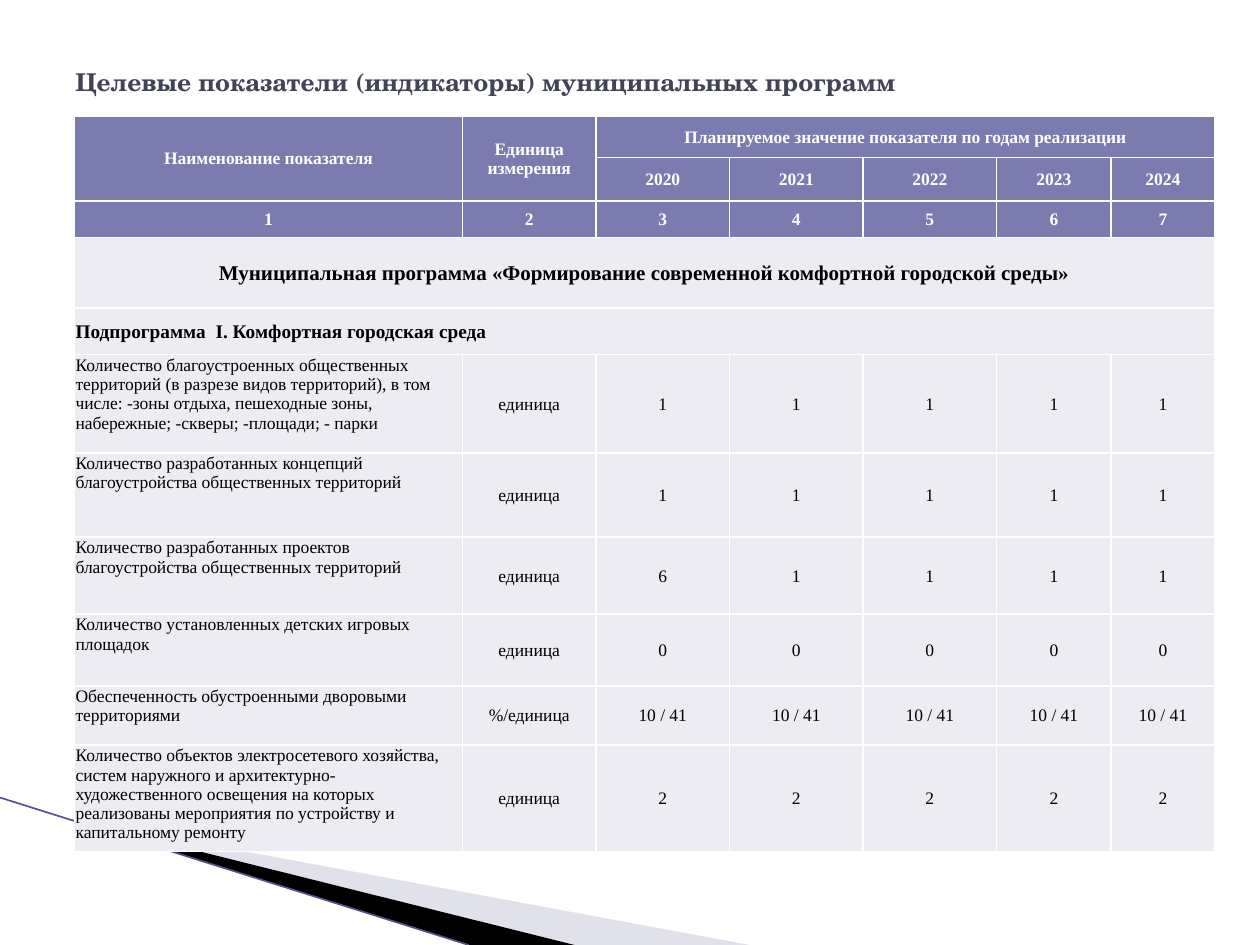
import pptx
import pptx.dml.color
import pptx.enum.shapes
import pptx.enum.text
import pptx.oxml
import pptx.oxml.ns
import pptx.util

RGB = pptx.dml.color.RGBColor
WHITE = RGB(0xFF, 0xFF, 0xFF)
BLACK = RGB(0x00, 0x00, 0x00)
INK = RGB(0x42, 0x44, 0x56)
HEAD = RGB(0x7A, 0x7B, 0xAE)
BODY = RGB(0xEC, 0xEC, 0xF2)
LILAC = RGB(0xB6, 0xB6, 0xD1)
EDGE = RGB(0x53, 0x54, 0x8A)

SERIF = "Times New Roman"
SCHOLA = "TeX Gyre Schola"
CENTER = pptx.enum.text.PP_ALIGN.CENTER
LEFT = pptx.enum.text.PP_ALIGN.LEFT
MIDDLE = pptx.enum.text.MSO_ANCHOR.MIDDLE
TOP = pptx.enum.text.MSO_ANCHOR.TOP

# The slide is a grid of 100 columns and 75 rows of square units.
UNIT = pptx.util.Inches(0.1)
COLS = [30.8, 10.6, 10.6, 10.6, 10.6, 9.1, 8.2]
ROWS = [3.3, 3.2, 2.9, 5.6, 3.7, 7.8, 6.7, 6.1, 5.7, 4.7, 7.7]

YEARS = ["2020", "2021", "2022", "2023", "2024"]
PLAN = [
    ("Количество благоустроенных общественных территорий (в разрезе видов "
     "территорий), в том числе: -зоны отдыха, пешеходные зоны, набережные; "
     "-скверы; -площади; - парки", "единица", ["1"] * 5),
    ("Количество разработанных концепций благоустройства общественных "
     "территорий", "единица", ["1"] * 5),
    ("Количество разработанных проектов благоустройства общественных "
     "территорий", "единица", ["6"] + ["1"] * 4),
    ("Количество установленных детских игровых площадок", "единица",
     ["0"] * 5),
    ("Обеспеченность обустроенными дворовыми территориями", "%/единица",
     ["10 / 41"] * 5),
    ("Количество объектов электросетевого хозяйства, систем наружного и "
     "архитектурно-художественного освещения на которых реализованы "
     "мероприятия по устройству и капитальному ремонту", "единица",
     ["2"] * 5),
]


def units(count):
    return pptx.util.Emu(round(count * UNIT))


def write(frame, text, size, color, bold=False, font=SERIF, align=LEFT):
    par = frame.paragraphs[0]
    par.alignment = align
    run = par.add_run()
    run.text = text
    run.font.name = font
    run.font.size = pptx.util.Pt(size)
    run.font.bold = bold
    run.font.color.rgb = color


def add_wedge(slide, points, color, alpha=100):
    (x, y), *rest = points
    form = slide.shapes.build_freeform(units(x), units(y), scale=1.0)
    form.add_line_segments([(units(a), units(b)) for a, b in rest])
    wedge = form.convert_to_shape()
    wedge.shadow.inherit = False
    wedge.line.fill.background()
    wedge.fill.solid()
    wedge.fill.fore_color.rgb = color
    if alpha < 100:
        tint = wedge.fill._xPr.find(".//" + pptx.oxml.ns.qn("a:srgbClr"))
        tint.append(pptx.oxml.parse_xml(
            f'<a:alpha {pptx.oxml.ns.nsdecls("a")} val="{alpha * 1000}"/>'))


def add_decor(slide, box):
    """Two wedges and a line that run down to the bottom of the box."""
    left, top, width, height = box
    foot = top + height
    tip = (left + 5.5, top + 2)
    mid = (left + 45.6, foot)
    low = (left + 37.2, foot)
    add_wedge(slide, [tip, (left + width, foot), mid], LILAC, 40)
    add_wedge(slide, [tip, mid, low], BLACK)
    line = slide.shapes.add_connector(
        pptx.enum.shapes.MSO_CONNECTOR.STRAIGHT,
        units(left), units(top + 0.3), units(low[0]), units(foot))
    line.line.color.rgb = EDGE
    line.line.width = pptx.util.Pt(0.95)
    line._element.spPr.append(pptx.oxml.parse_xml(
        f'<a:effectLst {pptx.oxml.ns.nsdecls("a")}/>'))


def add_title(slide, box, text):
    frame = slide.shapes.add_textbox(*map(units, box)).text_frame
    frame.word_wrap = True
    frame.vertical_anchor = MIDDLE
    write(frame, text, 14, INK, True, SCHOLA)


def style(cell, color):
    """Set the white borders, the fill and the margins of a cell."""
    props = cell._tc.get_or_add_tcPr()
    for side in "LRTB":
        props.append(pptx.oxml.parse_xml(
            f'<a:ln{side} {pptx.oxml.ns.nsdecls("a")} w="12700">'
            f'<a:solidFill><a:srgbClr val="{WHITE}"/></a:solidFill>'
            f'</a:ln{side}>'))
    cell.fill.solid()
    cell.fill.fore_color.rgb = color
    cell.margin_left = cell.margin_right = cell.margin_top = units(0.1)
    cell.margin_bottom = 0


def add_plan(slide, box):
    table = slide.shapes.add_table(
        len(ROWS), len(COLS), *map(units, box)).table
    for col, width in zip(table.columns, COLS):
        col.width = units(width)
    for row, height in zip(table.rows, ROWS):
        row.height = units(height)
    for r in range(len(ROWS)):
        for c in range(len(COLS)):
            style(table.cell(r, c), HEAD if r < 3 else BODY)

    def put(r, c, text, size=10, color=BLACK, bold=False, align=CENTER,
            anchor=MIDDLE, end=None):
        cell = table.cell(r, c)
        if end:
            cell.merge(table.cell(*end))
        cell.vertical_anchor = anchor
        write(cell.text_frame, text, size, color, bold, align=align)

    head = {"color": WHITE, "bold": True}
    put(0, 0, "Наименование показателя", end=(1, 0), **head)
    put(0, 1, "Единица измерения", end=(1, 1), **head)
    put(0, 2, "Планируемое значение показателя по годам реализации",
        end=(0, 6), **head)
    for c, year in enumerate(YEARS, 2):
        put(1, c, year, **head)
    for c in range(len(COLS)):
        put(2, c, str(c + 1), **head)
    put(3, 0, "Муниципальная программа «Формирование современной "
        "комфортной городской среды»", 12, bold=True, end=(3, 6))
    put(4, 0, "Подпрограмма  I. Комфортная городская среда", 11,
        bold=True, align=LEFT, end=(4, 6))
    for r, (name, unit, goals) in enumerate(PLAN, 5):
        put(r, 0, name, align=LEFT, anchor=TOP)
        for c, text in enumerate([unit, *goals], 1):
            put(r, c, text)


def main():
    deck = pptx.Presentation()
    deck.slide_width, deck.slide_height = units(100), units(75)
    slide = deck.slides.add_slide(deck.slide_layouts[6])
    add_decor(slide, (0, 63, 59.5, 12))
    add_title(slide, (5, 3, 90, 6.9),
              "Целевые показатели (индикаторы) муниципальных программ")
    add_plan(slide, (5.9, 9.2, sum(COLS), sum(ROWS)))
    deck.save("out.pptx")


if __name__ == "__main__":
    main()
